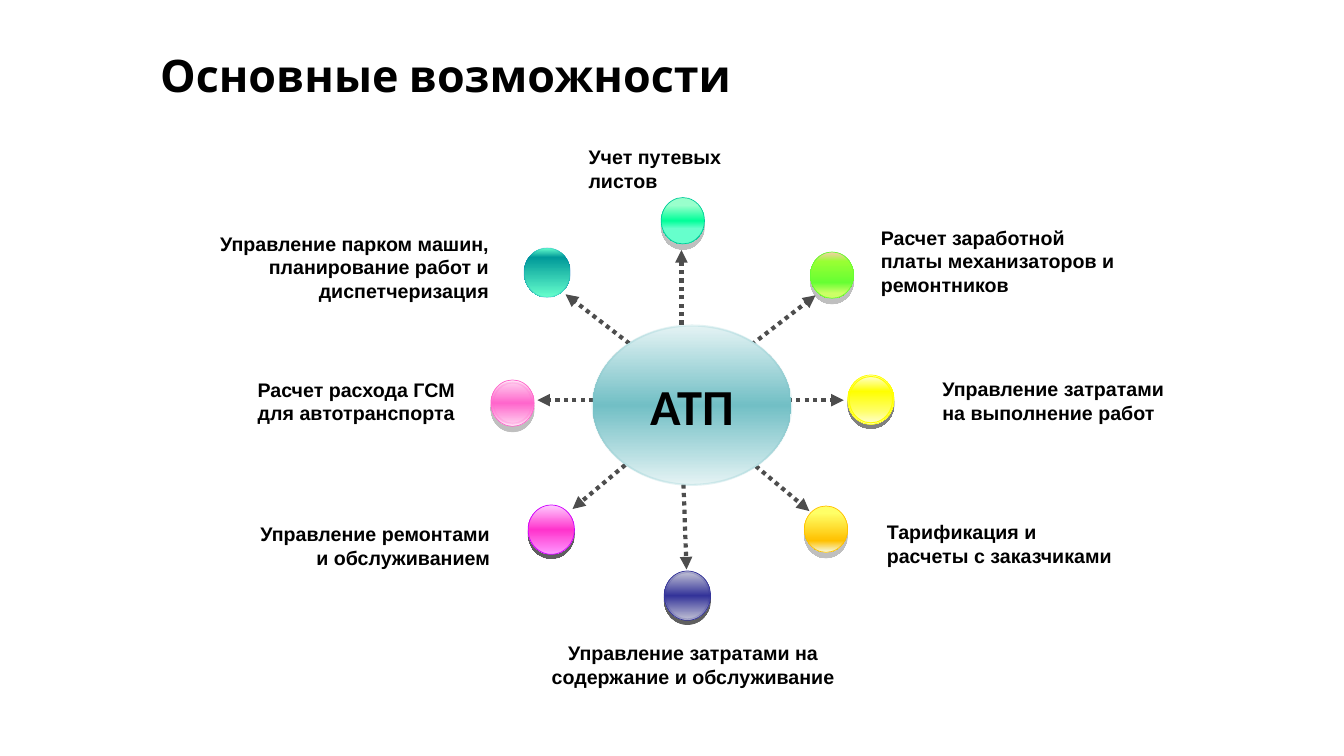
from dataclasses import dataclass
from typing import Optional

from pptx import Presentation
from pptx.dml.color import RGBColor
from pptx.enum.dml import MSO_LINE
from pptx.enum.shapes import MSO_CONNECTOR, MSO_SHAPE
from pptx.enum.text import MSO_ANCHOR, MSO_AUTO_SIZE, PP_ALIGN
from pptx.oxml.ns import qn
from pptx.util import Inches, Pt
from lxml import etree

WIDTH, HEIGHT = Inches(13.33), Inches(7.5)
BLANK_LAYOUT = 6
LEFT, CENTER, RIGHT = PP_ALIGN.LEFT, PP_ALIGN.CENTER, PP_ALIGN.RIGHT
MIDDLE = MSO_ANCHOR.MIDDLE
DOTTED = MSO_LINE.ROUND_DOT

BLACK = RGBColor(0, 0, 0)
ARROW_GRAY = RGBColor(0x4D, 0x4D, 0x4D)
SHADE = RGBColor(0x80, 0x80, 0x80)
DARK_SHADE = RGBColor(0x5F, 0x5F, 0x5F)
HUB_EDGE = RGBColor(0x72, 0xBF, 0xC5)
YELLOW = RGBColor(0xFF, 0xFF, 0x00)
BLUE = RGBColor(0x00, 0x70, 0xC0)
PURPLE = RGBColor(0xCC, 0x00, 0xFF)
ORANGE = RGBColor(0xFF, 0xC0, 0x00)
PINK = RGBColor(0xFF, 0x66, 0xCC)
MINT = RGBColor(0x00, 0xCC, 0x99)
NAVY = RGBColor(0x33, 0x33, 0x99)
LIME = RGBColor(0x66, 0xFF, 0x33)


def gradient(*stops):
    """Turn (position, hex) pairs into (position, RGBColor) pairs."""
    return [(pos, RGBColor.from_string(color)) for pos, color in stops]


HUB_FILL = gradient((0, "E4F3F4"), (50, "72BFC5"), (100, "E4F3F4"))
YELLOW_FILL = gradient((0, "FFFFCC"), (32, "FFFF00"), (74, "FFFF66"), (100, "FFFFCC"))
TEAL_FILL = gradient((0, "66FFCC"), (19, "009999"), (100, "66FFCC"))
MAGENTA_FILL = gradient((0, "FFCCFF"), (50, "FF33CC"), (100, "FF99FF"))
ORANGE_FILL = gradient((15, "FFFF66"), (75, "FFC000"), (100, "F5FAE5"))
PINK_FILL = gradient((0, "FFEFFA"), (50, "FF66CC"), (100, "FFEFFA"))
PINK_GLOSS = gradient((0, "FFCAED"), (50, "FF66CC"), (100, "FFCAED"))
MINT_FILL = gradient((17, "99FFCC"), (50, "00FF99"), (67, "66FFCC"))
NAVY_FILL = gradient((0, "BDBDD3"), (50, "333399"), (100, "BDBDD3"))
LIME_FILL = gradient((0, "F8CBAD"), (20, "99FF33"), (66, "66FF33"), (89, "CCFF66"))

# All places and sizes below are percentages of the slide's width and height.
HUB_CENTER, HUB_SIZE = (51.49, 53.6), (14.78, 21.07)
SMALL, BIG, TINY = (3.22, 6.13), (3.45, 6.53), (2.92, 5.47)
FROM_LEFT, FROM_RIGHT, FROM_MIDDLE = (50.48, 53.07), (52.28, 52.93), (50.7, 56.3)
SIDE_WIDTH, TWO_LINES, THREE_LINES = 18.98, 7.6, 10.8

# Shadow: colour, opacity in percent, distance in points
SOFT_SHADOW = (SHADE, 50, 4)
HARD_SHADOW = (SHADE, 100, 3)
DARK_SHADOW = (DARK_SHADE, 100, 3)


@dataclass
class Gloss:
    """Inner ellipse of a ball."""
    size: tuple
    fill: list
    edge: tuple


@dataclass
class Capability:
    label: str
    label_box: tuple
    align: PP_ALIGN
    center: tuple
    size: tuple
    fill: list
    edge: tuple  # colour, points, opacity in percent
    shadow: Optional[tuple]
    arrow: tuple  # start, tip
    gloss: Optional[Gloss] = None


CAPABILITIES = [
    Capability("Учет путевых листов", (43.05, 18.53, 16.65, TWO_LINES), LEFT,
               (50.81, 29.2), SMALL, MINT_FILL, (MINT, 0.5, 100), SOFT_SHADOW,
               (FROM_MIDDLE, (50.7, 33.07))),
    Capability("Расчет заработной платы механизаторов и ремонтников",
               (64.8, 29.2, SIDE_WIDTH, THREE_LINES), LEFT,
               (61.91, 36.4), SMALL, LIME_FILL, (LIME, 0.5, 100), SOFT_SHADOW,
               (FROM_LEFT, (60.68, 39.07))),
    Capability("Управление затратами на выполнение работ",
               (69.38, 49.2, SIDE_WIDTH, TWO_LINES), LEFT,
               (64.8, 52.87), BIG, YELLOW_FILL, (YELLOW, 0.5, 100), HARD_SHADOW,
               ((50.48, 52.93), (62.78, 52.93)),
               Gloss(SMALL, YELLOW_FILL, (YELLOW, 0.75, 100))),
    Capability("Тарификация и расчеты с заказчиками",
               (65.25, 68.13, SIDE_WIDTH, TWO_LINES), LEFT,
               (61.46, 70), SMALL, ORANGE_FILL, (ORANGE, 0.5, 100), SOFT_SHADOW,
               (FROM_LEFT, (60.22, 67.6))),
    Capability("Управление затратами на содержание и обслуживание",
               (39.98, 84.13, 23.18, TWO_LINES), CENTER,
               (51.15, 78.8), BIG, NAVY_FILL, (NAVY, 0.5, 100), DARK_SHADOW,
               (FROM_MIDDLE, (51.08, 75.33)),
               Gloss(SMALL, NAVY_FILL, (NAVY, 0.75, 20))),
    Capability("Управление ремонтами и обслуживанием",
               (18.22, 68.4, SIDE_WIDTH, TWO_LINES), RIGHT,
               (41.02, 70.07), BIG, MAGENTA_FILL, (PURPLE, 0.5, 100), DARK_SHADOW,
               (FROM_RIGHT, (42.6, 67.33))),
    Capability("Расчет расхода ГСМ для автотранспорта",
               (15.6, 49.33, SIDE_WIDTH, TWO_LINES), RIGHT,
               (38.14, 53.33), SMALL, PINK_FILL, (PINK, 0.5, 100), SOFT_SHADOW,
               (FROM_RIGHT, (39.98, 52.93)),
               Gloss(TINY, PINK_GLOSS, (PINK, 1.5, 20))),
    Capability("Управление парком машин, планирование работ и диспетчеризация",
               (11.17, 30, 25.95, THREE_LINES), RIGHT,
               (40.72, 36.07), BIG, TEAL_FILL, (BLUE, 0.75, 20), None,
               (FROM_RIGHT, (42.08, 38.93))),
]


def across(percent):
    return round(WIDTH * percent / 100)


def down(percent):
    return round(HEIGHT * percent / 100)


def add_color(parent, color, opacity=100):
    color_node = etree.SubElement(parent, qn("a:srgbClr"), val=str(color))
    if opacity < 100:
        etree.SubElement(color_node, qn("a:alpha"), val=str(opacity * 1000))


def fill_downward(shape, stops):
    shape.fill.gradient()
    shape.fill.gradient_angle = 270
    stop_list = shape._element.spPr.find(".//" + qn("a:gsLst"))
    for old_stop in list(stop_list):
        stop_list.remove(old_stop)
    for position, color in stops:
        add_color(etree.SubElement(stop_list, qn("a:gs"), pos=str(position * 1000)), color)


def add_ellipse(slide, center, size, stops, edge, shadow=None):
    (x, y), (width, height) = center, size
    ellipse = slide.shapes.add_shape(MSO_SHAPE.OVAL, across(x - width / 2), down(y - height / 2),
                                     across(width), down(height))
    fill_downward(ellipse, stops)
    color, points, opacity = edge
    ellipse.line.width = Pt(points)
    ellipse.line.color.rgb = color
    if opacity < 100:
        edge_color = ellipse.line._ln.find(".//" + qn("a:srgbClr"))
        etree.SubElement(edge_color, qn("a:alpha"), val=str(opacity * 1000))
    ellipse.shadow.inherit = False
    if shadow:
        shade, shade_opacity, distance = shadow
        effects = ellipse._element.spPr.find(qn("a:effectLst"))
        outer = etree.SubElement(effects, qn("a:outerShdw"), dist=str(Pt(distance)),
                                 dir="5400000", algn="ctr", rotWithShape="0")
        add_color(outer, shade, shade_opacity)
    return ellipse


def add_arrow(slide, start, tip):
    arrow = slide.shapes.add_connector(MSO_CONNECTOR.STRAIGHT, across(start[0]), down(start[1]),
                                       across(tip[0]), down(tip[1]))
    arrow.line.color.rgb = ARROW_GRAY
    arrow.line.width = Pt(3)
    arrow.line.dash_style = DOTTED
    etree.SubElement(arrow.line._ln, qn("a:tailEnd"), type="triangle")
    etree.SubElement(arrow._element.spPr, qn("a:effectLst"))


def write(frame, text, font_name, size, align):
    frame.word_wrap = True
    paragraph = frame.paragraphs[0]
    paragraph.text = text
    paragraph.alignment = align
    font = paragraph.runs[0].font
    font.name, font.size, font.bold = font_name, Pt(size), True
    font.color.rgb = BLACK


def add_text(slide, box, text, font_name, size, align):
    left, top, width, height = box
    frame = slide.shapes.add_textbox(across(left), down(top), across(width), down(height)).text_frame
    write(frame, text, font_name, size, align)
    return frame


def main():
    deck = Presentation()
    deck.slide_width, deck.slide_height = WIDTH, HEIGHT
    slide = deck.slides.add_slide(deck.slide_layouts[BLANK_LAYOUT])

    title = add_text(slide, (11.17, 6.13, 80.48, 8.4), "Основные возможности", "Cabin", 32, LEFT)
    title.vertical_anchor = MIDDLE
    title.paragraphs[0].line_spacing = 0.9

    for item in CAPABILITIES:
        add_arrow(slide, *item.arrow)
    for item in CAPABILITIES:
        add_ellipse(slide, item.center, item.size, item.fill, item.edge, item.shadow)
        if item.gloss:
            add_ellipse(slide, item.center, item.gloss.size, item.gloss.fill, item.gloss.edge)

    hub = add_ellipse(slide, HUB_CENTER, HUB_SIZE, HUB_FILL, (HUB_EDGE, 1.5, 20))
    write(hub.text_frame, "АТП", "Calibri", 36, CENTER)
    hub.text_frame.vertical_anchor = MIDDLE

    for item in CAPABILITIES:
        label = add_text(slide, item.label_box, item.label, "Arial", 14, item.align)
        label.auto_size = MSO_AUTO_SIZE.SHAPE_TO_FIT_TEXT
    deck.save("out.pptx")


if __name__ == "__main__":
    main()
